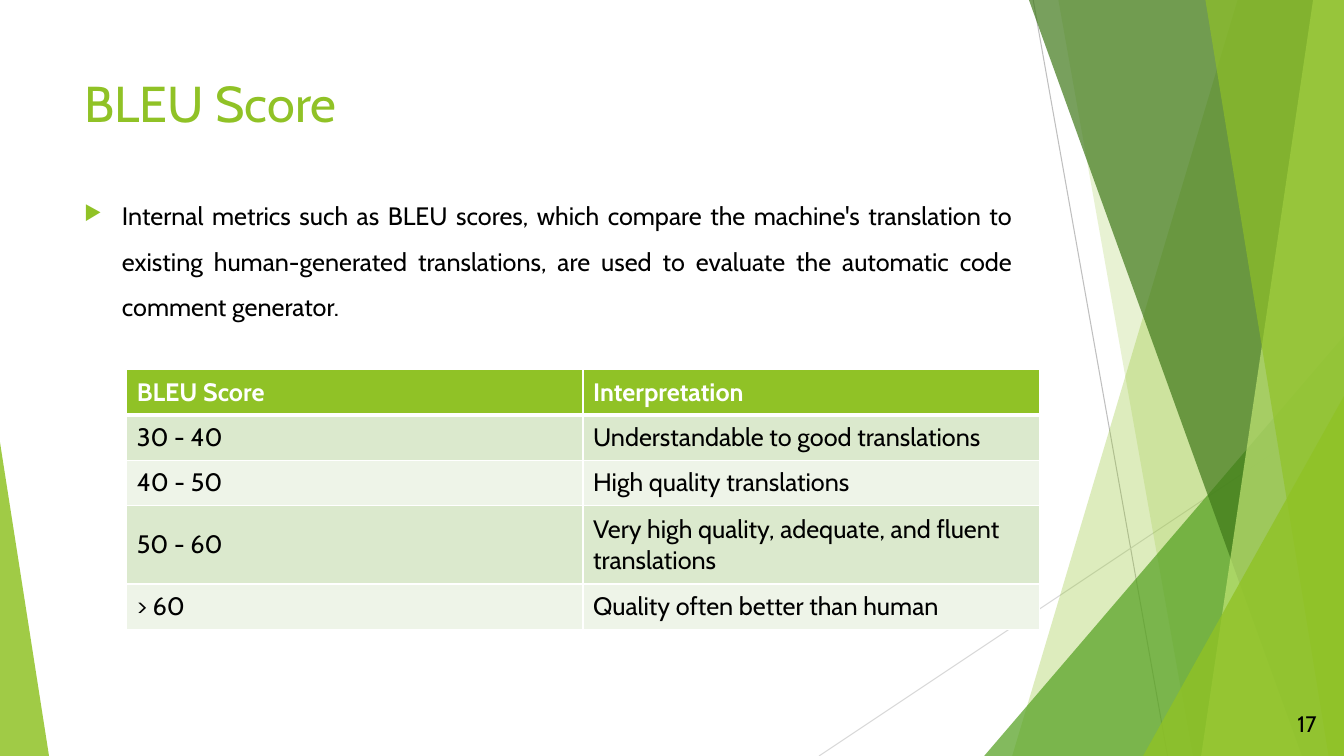
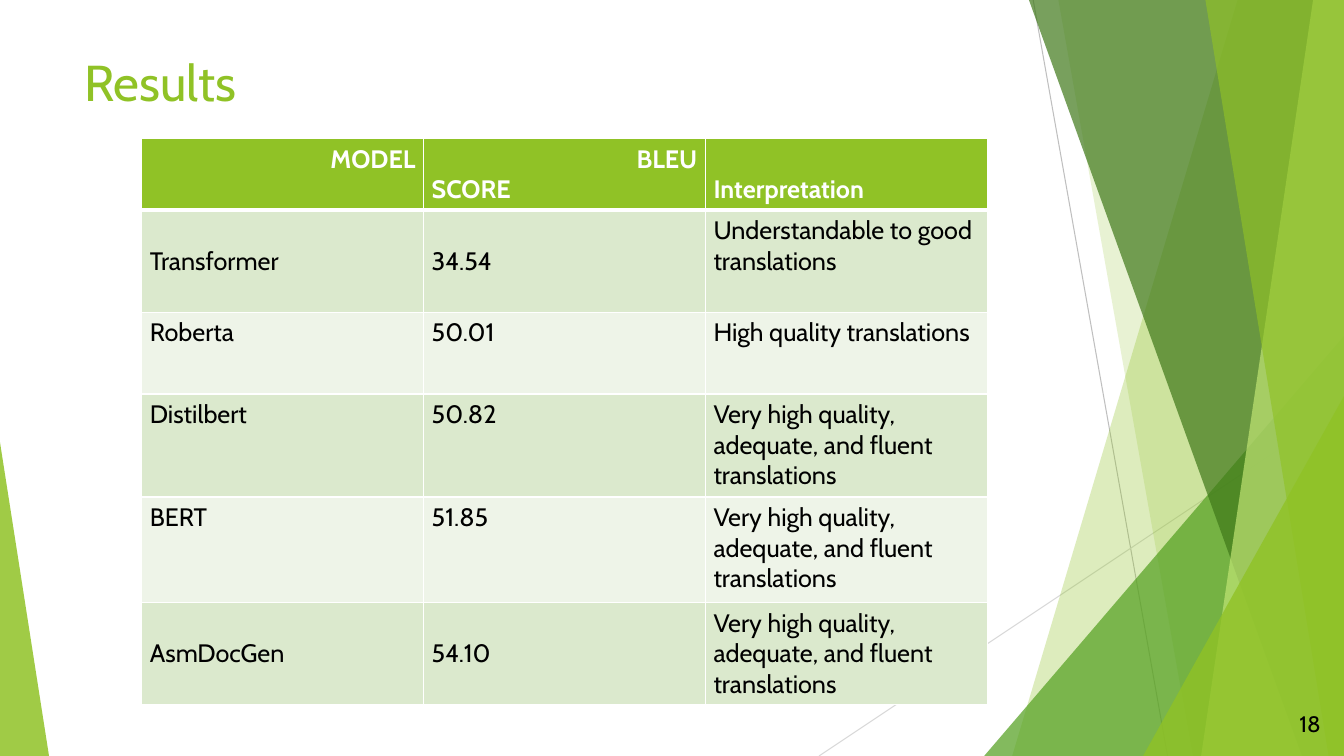
from lxml import etree
from pptx import Presentation
from pptx.dml import color
from pptx.enum import shapes, text
from pptx.oxml import ns
from pptx.util import Pt

WIDTH, HEIGHT = 960, 540
FONT = "Cabin"
GREEN, WHITE, BLACK = "90C226", "FFFFFF", "000000"
BANDS = ("DBE9CD", "EEF4E8")
LEFT, RIGHT = text.PP_ALIGN.LEFT, text.PP_ALIGN.RIGHT
TOP, MIDDLE, BOTTOM = text.MSO_ANCHOR.TOP, text.MSO_ANCHOR.MIDDLE, text.MSO_ANCHOR.BOTTOM

RAYS = [
    ((738, 0), (834, 540), "BFBFBF"),
    ((960, 290), (585, 540), "D9D9D9"),
]
FACETS = [
    ("band", (884, 723), GREEN, 30),
    ("band", (756, 852), GREEN, 20),
    ("triangle", (703, 240, 257, 300), "54A021", 72),
    ("band", (735, 930), "3F7819", 70),
    ("band", (938, 858), "C0E474", 70),
    ("band", (861, 949), GREEN, 65),
    ("triangle", (816.5, 283, 143.5, 257), GREEN, 80),
    ("triangle", (0, 316, 35, 224), GREEN, 85),
]


def rgb(value):
    return color.RGBColor.from_string(value)


def add_child(parent, tag, **attributes):
    child = etree.SubElement(parent, ns.qn(tag))
    for name, value in attributes.items():
        child.set(name, str(value))
    return child


def points(box):
    return [Pt(value) for value in box]


def write(paragraph, content, size=18, ink=BLACK, bold=False, align=LEFT):
    paragraph.alignment = align
    run = paragraph.add_run()
    run.text = content
    run.font.name = FONT
    run.font.size = Pt(size)
    run.font.bold = bold
    run.font.color.rgb = rgb(ink)


def paint(shape, fill, opacity):
    shape.shadow.inherit = False
    shape.line.fill.background()
    shape.fill.solid()
    shape.fill.fore_color.rgb = rgb(fill)
    choice = shape.fill._xPr.find(ns.qn("a:solidFill"))[0]
    add_child(choice, "a:alpha", val=opacity * 1000)


def add_ray(group, start, end, ink):
    connector = group.shapes.add_connector(
        shapes.MSO_CONNECTOR.STRAIGHT, *points(start + end))
    connector.line.color.rgb = rgb(ink)
    connector.line.width = Pt(0.75)
    add_child(connector._element.spPr, "a:effectLst")


def add_band(group, top_x, bottom_x):
    builder = group.shapes.build_freeform(top_x, 0, scale=Pt(1))
    builder.add_line_segments([(WIDTH, 0), (WIDTH, HEIGHT), (bottom_x, HEIGHT)])
    return builder.convert_to_shape()


def add_triangle(group, box):
    shape = group.shapes.add_shape(
        shapes.MSO_SHAPE.ISOSCELES_TRIANGLE, *points(box))
    shape.adjustments[0] = 1 if box[0] else 0
    return shape


def add_backdrop(slide):
    group = slide.shapes.add_group_shape()
    for ray in RAYS:
        add_ray(group, *ray)
    for kind, place, fill, opacity in FACETS:
        shape = add_band(group, *place) if kind == "band" else add_triangle(group, place)
        paint(shape, fill, opacity)
    slide.shapes._spTree.insert(2, group._element)


def set_title(slide, content, box):
    title = slide.shapes.title
    title.left, title.top, title.width, title.height = points(box)
    title.text_frame.vertical_anchor = TOP
    title.text_frame.word_wrap = True
    write(title.text_frame.paragraphs[0], content, size=36, ink=GREEN)


def add_text_box(slide, box, content, anchor=TOP, **style):
    frame = slide.shapes.add_textbox(*points(box)).text_frame
    frame.word_wrap = True
    frame.vertical_anchor = anchor
    write(frame.paragraphs[0], content, **style)
    return frame.paragraphs[0]


def add_bullet(slide, box, content):
    paragraph = add_text_box(slide, box, content, align=text.PP_ALIGN.JUSTIFY)
    paragraph.line_spacing = 1.5
    paragraph.space_before = Pt(10)
    properties = paragraph._p.get_or_add_pPr()
    properties.set("marL", str(Pt(27)))
    properties.set("indent", str(-Pt(27)))
    add_child(add_child(properties, "a:buClr"), "a:srgbClr", val=GREEN)
    add_child(properties, "a:buSzPct", val=80000)
    add_child(properties, "a:buChar", char="▶")


def set_borders(cell, top, bottom):
    properties = cell._tc.get_or_add_tcPr()
    for side, width in (("L", 1), ("R", 1), ("T", top), ("B", bottom)):
        line = add_child(properties, "a:ln" + side, w=Pt(width))
        add_child(add_child(line, "a:solidFill"), "a:srgbClr", val=WHITE)


def format_cell(cell, row, lines, margin, anchor, aligns):
    header = row == 0
    set_borders(cell, 3 if row == 1 else 1, 3 if header else 1)
    cell.fill.solid()
    cell.fill.fore_color.rgb = rgb(GREEN if header else BANDS[(row - 1) % 2])
    cell.margin_left = cell.margin_right = Pt(margin)
    cell.margin_top = cell.margin_bottom = Pt(3.6)
    cell.vertical_anchor = anchor
    frame = cell.text_frame
    for index, (line, align) in enumerate(zip(lines.split("\n"), aligns)):
        paragraph = frame.add_paragraph() if index else frame.paragraphs[0]
        write(paragraph, line, ink=WHITE if header else BLACK, bold=header, align=align)


def add_table(slide, box, rows, heights, margin=7.2, anchors=None, aligns=None):
    anchors, aligns = anchors or {}, aligns or {}
    table = slide.shapes.add_table(len(rows), len(rows[0]), *points(box)).table
    for column in table.columns:
        column.width = Pt(box[2] / len(rows[0]))
    for row, (values, height) in enumerate(zip(rows, heights)):
        table.rows[row].height = Pt(height)
        for column, value in enumerate(values):
            place = (row, column)
            format_cell(table.cell(*place), row, value, margin,
                        anchors.get(place, MIDDLE), aligns.get(place, [LEFT]))


def start_slide(presentation, title, title_box, number, number_left):
    slide = presentation.slides.add_slide(presentation.slide_layouts[5])
    add_backdrop(slide)
    set_title(slide, title, title_box)
    add_text_box(slide, (number_left, 502.5, 54, 29), number,
                 anchor=MIDDLE, size=16, align=RIGHT)
    return slide


def build_score_slide(presentation):
    slide = start_slide(presentation, "BLEU Score", (53, 48, 677, 104), "17", 893.5)
    add_bullet(slide, (53, 129, 677, 324),
               "Internal metrics such as BLEU scores, which compare the machine's "
               "translation to existing human-generated translations, are used to "
               "evaluate the automatic code comment generator.")
    rows = [
        ("BLEU Score", "Interpretation"),
        ("30 - 40", "Understandable to good translations"),
        ("40 - 50", "High quality translations"),
        ("50 - 60", "Very high quality, adequate, and fluent translations"),
        ("> 60", "Quality often better than human"),
    ]
    add_table(slide, (90.5, 264, 652, 185), rows, [32.4, 32.4, 32.4, 56, 32.4])


def build_results_slide(presentation):
    slide = start_slide(presentation, "Results", (53, 33, 677, 81), "18", 896.5)
    fluent = "Very high quality, adequate, and fluent translations"
    rows = [
        ("MODEL", "BLEU\nSCORE", "Interpretation"),
        ("Transformer", "34.54", "Understandable to good translations"),
        ("Roberta", "50.01", "High quality translations"),
        ("Distilbert", "50.82", fluent),
        ("BERT", "51.85", fluent),
        ("AsmDocGen", "54.10", fluent),
    ]
    anchors = {(row, column): TOP for row in (2, 3, 4) for column in range(3)}
    anchors.update({(0, 0): TOP, (0, 1): TOP, (0, 2): BOTTOM, (1, 2): TOP})
    aligns = {(0, 0): [RIGHT], (0, 1): [RIGHT, LEFT]}
    add_table(slide, (101.25, 99, 604, 404.5), rows,
              [51, 73, 58.5, 73.5, 75.5, 73], 5.8, anchors, aligns)


def main():
    presentation = Presentation()
    presentation.slide_width, presentation.slide_height = Pt(WIDTH), Pt(HEIGHT)
    build_score_slide(presentation)
    build_results_slide(presentation)
    presentation.save("out.pptx")


if __name__ == "__main__":
    main()
